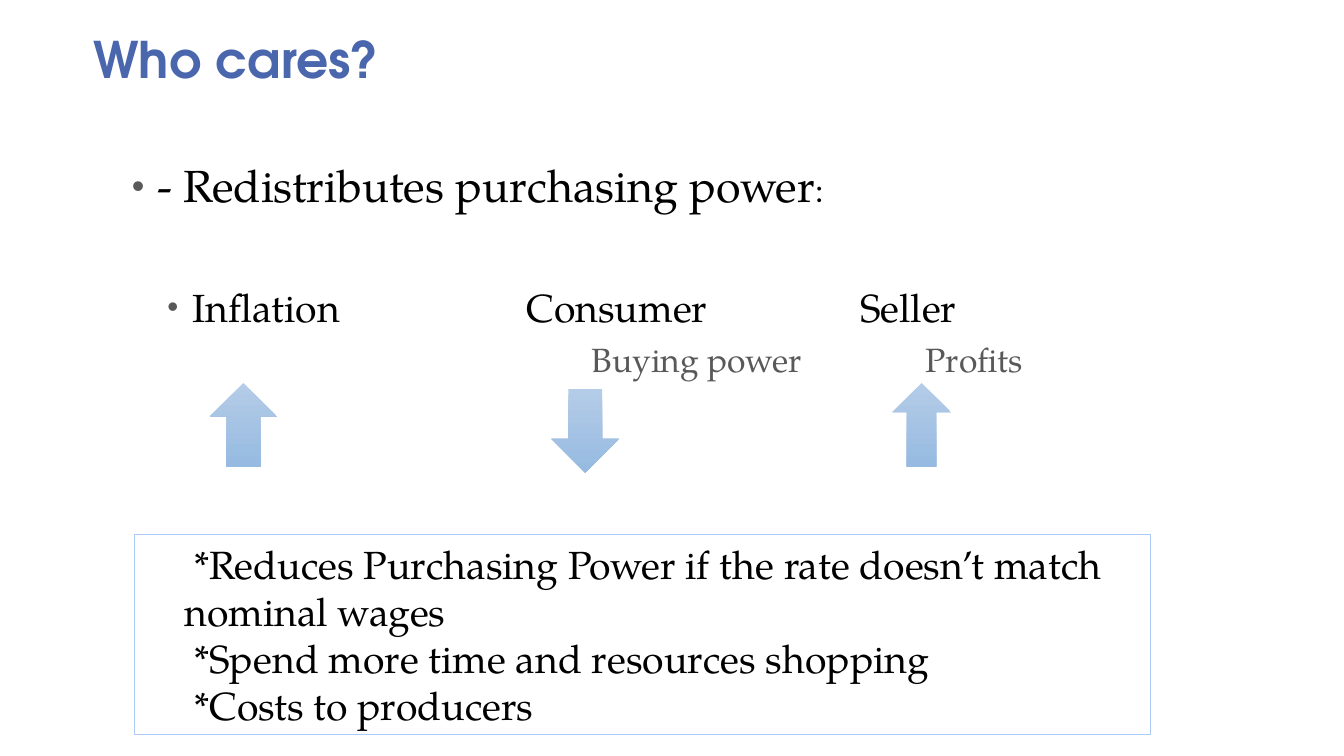
from pptx import Presentation
from pptx.dml.color import RGBColor
from pptx.enum.shapes import MSO_SHAPE
from pptx.enum.text import MSO_ANCHOR, PP_ALIGN
from pptx.oxml import parse_xml
from pptx.oxml.ns import nsdecls
from pptx.util import Inches, Pt

UP, DOWN = MSO_SHAPE.UP_ARROW, MSO_SHAPE.DOWN_ARROW
TOP, MIDDLE, BOTTOM = MSO_ANCHOR.TOP, MSO_ANCHOR.MIDDLE, MSO_ANCHOR.BOTTOM
LEFT = PP_ALIGN.LEFT

# Content
TITLE = "Who cares?"
LEAD = ("- Redistributes purchasing power", ":")
# heading, effect, arrow shape, arrow left, arrow top, arrow width
COLUMNS = [
    ("Inflation", None, UP, 2.08, 3.8, 0.67),
    ("Consumer", "Buying power", DOWN, 5.47, 3.86, 0.67),
    ("Seller", "Profits", UP, 8.85, 3.8, 0.58),
]
COSTS = [
    " *Reduces Purchasing Power if the rate doesn’t match nominal wages",
    " *Spend more time and resources shopping",
    " *Costs to producers",
]

# Style and grid
COLORS = {"title": "4A66AC", "text": "000000", "muted": "595959",
          "arrow_top": "B4CCE7", "arrow_end": "96BAE1", "frame": "ACCBF9"}
HEAD_FONT, BODY_FONT = "TeX Gyre Adventor", "TeX Gyre Pagella"
COLUMN_LEFT, COLUMN_STEP, COLUMN_TOP = 1.66, 3.31, 2.81
HANG = 0.25
ARROW_HEIGHT = 0.83


def color(name):
    return RGBColor.from_string(COLORS[name])


def set_frame(shape, anchor, side=0.1):
    frame = shape.text_frame
    frame.word_wrap = True
    frame.vertical_anchor = anchor
    frame.margin_left = frame.margin_right = Inches(side)
    return frame


def add_box(left, top, width, height, anchor=TOP, side=0.1):
    box = page.shapes.add_textbox(Inches(left), Inches(top), Inches(width), Inches(height))
    return set_frame(box, anchor, side)


def style(para, size, tint="text", font=BODY_FONT, spacing=1.0, margin=0, indent=0, bullet=False):
    properties = para._p.get_or_add_pPr()
    properties.set("marL", str(Inches(margin)))
    properties.set("indent", str(Inches(indent)))
    para.alignment = LEFT
    para.line_spacing = spacing
    if bullet:
        for xml in (f'<a:buClr {nsdecls("a")}><a:srgbClr val="{COLORS["muted"]}"/></a:buClr>',
                    f'<a:buSzPct {nsdecls("a")} val="80000"/>',
                    f'<a:buFont {nsdecls("a")} typeface="Arial"/>',
                    f'<a:buChar {nsdecls("a")} char="•"/>'):
            properties.append(parse_xml(xml))
    for span in para.runs:
        span.font.size = Pt(size)
        span.font.name = font
        span.font.color.rgb = color(tint)


deck = Presentation()
deck.slide_width, deck.slide_height = Inches(13.33), Inches(7.5)
page = deck.slides.add_slide(deck.slide_layouts[6])

# Title
para = add_box(0.83, 0.21, 9.5, 0.71, BOTTOM).paragraphs[0]
para.text = TITLE
style(para, 36, "title", HEAD_FONT, spacing=0.8)
para.runs[0].font.bold = True

# Lead statement
para = add_box(1.16, 1.58, 11.67, 0.7).paragraphs[0]
for words in LEAD:
    para.add_run().text = words
style(para, 32, spacing=0.9, margin=0.3, indent=-HANG, bullet=True)
para.runs[1].font.size = Pt(24)

# Columns with their arrows
for index, (heading, effect, kind, left, top, width) in enumerate(COLUMNS):
    frame = add_box(COLUMN_LEFT + index * COLUMN_STEP, COLUMN_TOP, COLUMN_STEP, 1, side=0)
    para = frame.paragraphs[0]
    para.text = heading
    first = index == 0
    style(para, 28, spacing=0.9, margin=HANG, indent=-HANG if first else 0, bullet=first)
    if effect:
        para = frame.add_paragraph()
        para.text = effect
        style(para, 24, "muted", margin=HANG + 0.65)
        para.space_before = Pt(6)

    arrow = page.shapes.add_shape(kind, Inches(left), Inches(top), Inches(width),
                                  Inches(ARROW_HEIGHT))
    arrow.shadow.inherit = False
    arrow.line.fill.background()
    arrow.fill.gradient()
    arrow.fill.gradient_angle = 270
    for stop, name, position in zip(arrow.fill.gradient_stops, ("arrow_top", "arrow_end"), (0, 1)):
        stop.color.rgb = color(name)
        stop.position = position

# Framed list of costs
panel = page.shapes.add_shape(MSO_SHAPE.RECTANGLE, Inches(1.33), Inches(5.3),
                              Inches(10.08), Inches(1.99))
panel.shadow.inherit = False
panel.fill.background()
panel.line.color.rgb = color("frame")
panel.line.width = Pt(0.75)
frame = set_frame(panel, MIDDLE)
for index, words in enumerate(COSTS):
    para = frame.add_paragraph() if index else frame.paragraphs[0]
    para.text = words
    style(para, 28, margin=0.4)

deck.save("out.pptx")
